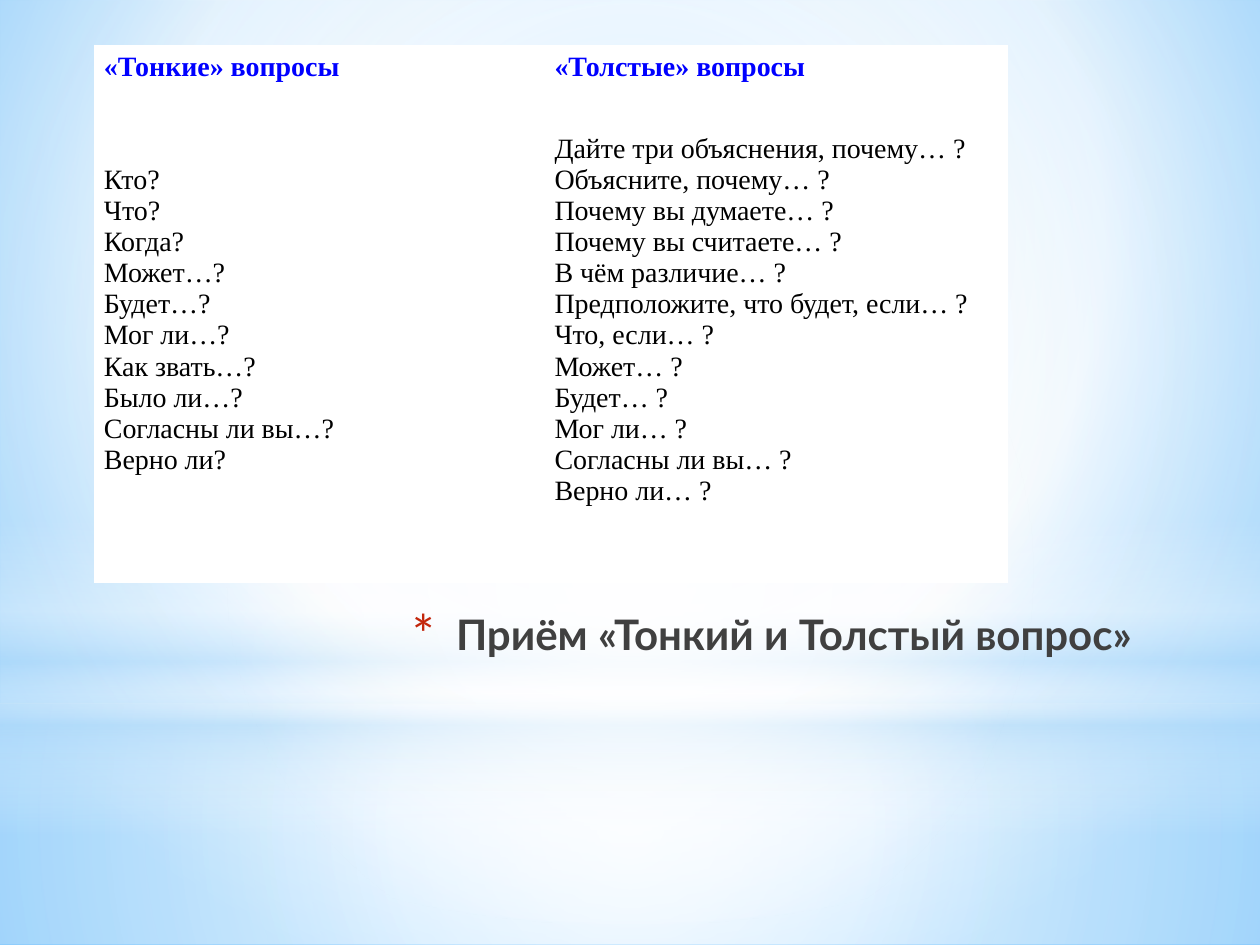
import dataclasses

import lxml.etree
import pptx
import pptx.dml.color
import pptx.enum.shapes
import pptx.enum.text
import pptx.oxml.ns
import pptx.util

Pt = pptx.util.Pt
qn = pptx.oxml.ns.qn
SHAPE = pptx.enum.shapes.MSO_SHAPE
ANCHOR = pptx.enum.text.MSO_ANCHOR
ALIGN = pptx.enum.text.PP_ALIGN


@dataclasses.dataclass(frozen=True)
class Theme:
    white: str = "FFFFFF"
    haze: str = "B4DCFA"
    sky: str = "9ED5FF"
    deep_sky: str = "5BB9FF"
    title: str = "404040"
    bullet: str = "C3260C"
    heading: str = "0000FF"
    text: str = "000000"
    title_font: str = "Lato"
    table_font: str = "Times New Roman"
    title_size: int = 24
    table_size: int = 16
    line_height: float = 17.75


class SlideBuilder:
    def __init__(self, theme, slide):
        self.theme = theme
        self.slide = slide

    def rgb(self, colour):
        return pptx.dml.color.RGBColor.from_string(colour)

    def add(self, parent, tag, **attributes):
        values = {key: str(value) for key, value in attributes.items()}
        return lxml.etree.SubElement(parent, qn(tag), values)

    def gradient(self, fill, owner, stops, focus=None):
        fill.gradient()
        gradient = owner.find(".//" + qn("a:gradFill"))
        gradient.clear()
        gradient.set("rotWithShape", "1")
        stop_list = self.add(gradient, "a:gsLst")
        for position, colour, opacity in stops:
            stop = self.add(stop_list, "a:gs", pos=position * 1000)
            tint = self.add(stop, "a:srgbClr", val=colour)
            if opacity < 100:
                self.add(tint, "a:alpha", val=opacity * 1000)
        if focus:
            path = self.add(gradient, "a:path", path="circle")
            sides = {side: inset * 1000 for side, inset in zip("ltrb", focus)}
            self.add(path, "a:fillToRect", **sides)
        else:
            self.add(gradient, "a:lin", ang=90 * 60000, scaled=0)

    def background(self, stops, focus):
        self.gradient(self.slide.background.fill, self.slide.element, stops, focus)

    def glow(self, kind, top, height, stops, focus=None):
        glow = self.slide.shapes.add_shape(kind, Pt(0), Pt(top), Pt(720), Pt(height))
        glow.shadow.inherit = False
        glow.line.fill.background()
        self.gradient(glow.fill, glow.element, stops, focus)

    def style(self, paragraph, font, size, colour, bold):
        for run in paragraph.runs:
            run.font.name = font
            run.font.size = Pt(size)
            run.font.bold = bold
            run.font.color.rgb = self.rgb(colour)

    def title(self, text, left, top, width, height):
        title = self.slide.shapes.title
        title.left, title.top = Pt(left), Pt(top)
        title.width, title.height = Pt(width), Pt(height)
        self.slide.shapes.element.append(title.element)
        frame = title.text_frame
        frame.text = text
        frame.word_wrap = True
        frame.auto_size = pptx.enum.text.MSO_AUTO_SIZE.NONE
        frame.vertical_anchor = ANCHOR.TOP
        heading = frame.paragraphs[0]
        heading.alignment = ALIGN.RIGHT
        theme = self.theme
        self.style(heading, theme.title_font, theme.title_size, theme.title, True)
        properties = heading._p.get_or_add_pPr()
        properties.set("marL", str(Pt(25.2)))
        properties.set("indent", str(-Pt(25.2)))
        bullet_colour = self.add(properties, "a:buClr")
        self.add(bullet_colour, "a:srgbClr", val=theme.bullet)
        self.add(properties, "a:buSzPct", val=128000)
        self.add(properties, "a:buFont", typeface=theme.title_font)
        self.add(properties, "a:buChar", char="*")

    def cell(self, cell, lines, colour, bold, space_below=0):
        cell.fill.solid()
        cell.fill.fore_color.rgb = self.rgb(self.theme.white)
        cell.vertical_anchor = ANCHOR.MIDDLE
        cell.margin_left = cell.margin_right = Pt(5.4)
        cell.margin_top = Pt(2.9)
        cell.margin_bottom = Pt(2.9 + space_below)
        cell.text_frame.text = "\n".join(lines)
        for paragraph in cell.text_frame.paragraphs:
            paragraph.alignment = ALIGN.LEFT
            self.style(paragraph, self.theme.table_font, self.theme.table_size, colour, bold)

    def question_table(self, questions, left, top, widths, heights):
        table = self.slide.shapes.add_table(
            2, len(questions), Pt(left), Pt(top), Pt(sum(widths)), Pt(sum(heights))
        ).table
        table.horz_banding = False
        for row, height in zip(table.rows, heights):
            row.height = Pt(height)
        for index, (heading, lines) in enumerate(questions.items()):
            table.columns[index].width = Pt(widths[index])
            self.cell(table.cell(0, index), [heading], self.theme.heading, True)
            self.cell(table.cell(1, index), lines, self.theme.text, False,
                      self.theme.line_height)


def main():
    theme = Theme()
    presentation = pptx.Presentation()
    presentation.slide_width, presentation.slide_height = Pt(720), Pt(540)
    slide = presentation.slides.add_slide(presentation.slide_layouts[5])
    builder = SlideBuilder(theme, slide)
    white, haze = theme.white, theme.haze
    centre = (50, 50, 50, 50)

    builder.background(
        [(0, theme.sky, 100), (60, white, 100), (100, theme.deep_sky, 100)],
        (20, 10, 20, 60))
    builder.glow(SHAPE.RECTANGLE, 402, 138,
                 [(0, white, 91), (37, white, 76), (100, haze, 79)], centre)
    builder.glow(SHAPE.RECTANGLE, 0, 402,
                 [(0, white, 89), (48, white, 62), (100, haze, 79)], centre)
    builder.glow(SHAPE.RECTANGLE, 297, 180,
                 [(0, white, 0), (29, white, 30), (45, haze, 40),
                  (55, white, 26), (65, haze, 60), (100, white, 0)])
    builder.glow(SHAPE.OVAL, 126, 402, [(0, white, 100), (56, white, 0)], centre)

    builder.title("Приём «Тонкий и Толстый вопрос»", 141, 344, 513, 90)

    questions = {
        "«Тонкие» вопросы": [
            "Кто?", "Что?", "Когда?", "Может…?", "Будет…?", "Мог ли…?",
            "Как звать…?", "Было ли…?", "Согласны ли вы…?", "Верно ли?",
        ],
        "«Толстые» вопросы": [
            "Дайте три объяснения, почему… ?", "Объясните, почему… ?",
            "Почему вы думаете… ?", "Почему вы считаете… ?",
            "В чём различие… ?", "Предположите, что будет, если… ?",
            "Что, если… ?", "Может… ?", "Будет… ?", "Мог ли… ?",
            "Согласны ли вы… ?", "Верно ли… ?",
        ],
    }
    builder.question_table(questions, 54, 26, (257.5, 264), (25, 281.5))
    presentation.save("out.pptx")


if __name__ == "__main__":
    main()
